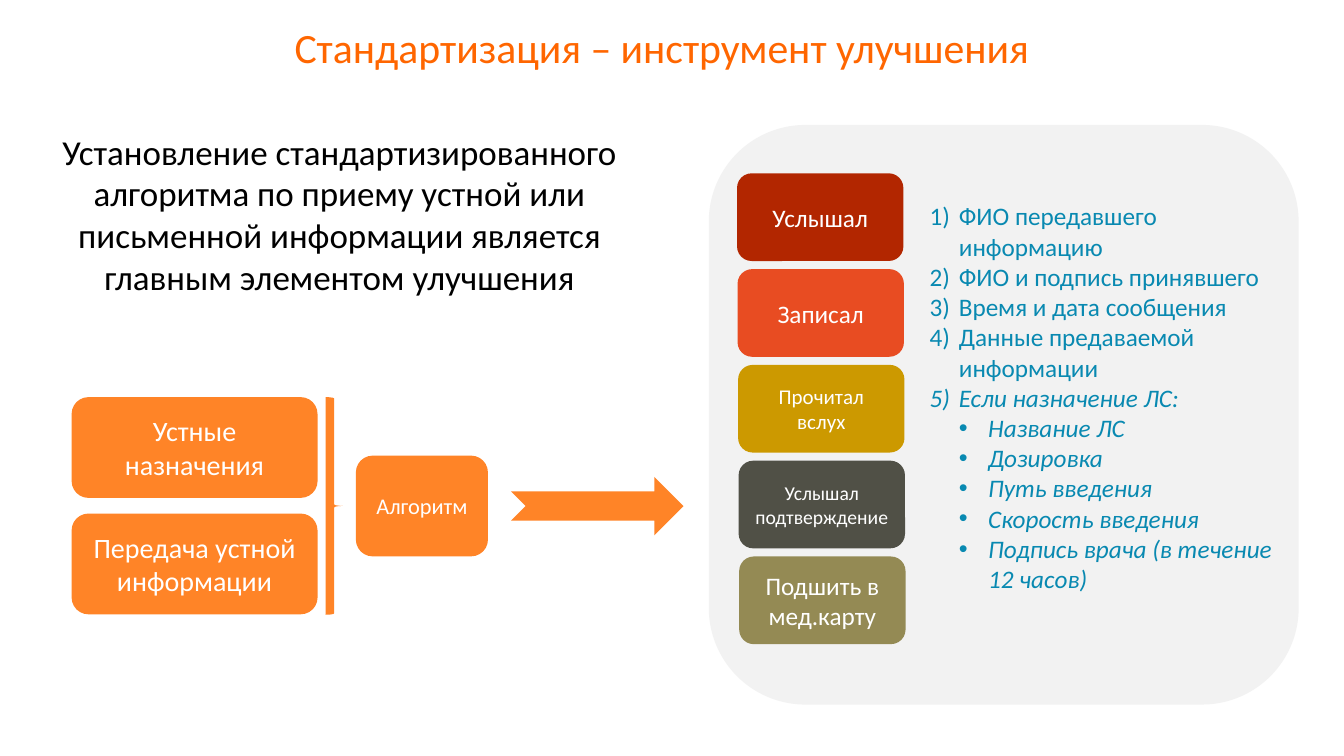
import pptx
import pptx.util
import pptx.dml.color
import pptx.enum.shapes
import pptx.enum.text
import pptx.oxml.ns
import lxml.etree

Pt = pptx.util.Pt
Inches = pptx.util.Inches
Shape = pptx.enum.shapes.MSO_SHAPE
Align = pptx.enum.text.PP_ALIGN
Anchor = pptx.enum.text.MSO_ANCHOR

COLORS = {
    "title": "FF6600", "text": "000000", "list": "0989B1", "white": "FFFFFF",
    "panel": "F2F2F2", "orange": "FF8427", "red": "B22600", "coral": "E84C22",
    "gold": "CC9900", "slate": "505046", "olive": "948A54",
}


class SlideBuilder:
    """Holds the style and the current page; places are in percent of the slide."""

    font = "Calibri"
    inset = Inches(0.11)

    def __init__(self, deck, page):
        self.deck = deck
        self.page = page

    def place(self, left, top, width, height):
        across, down = self.deck.slide_width / 100, self.deck.slide_height / 100
        return [round(value) for value in
                (left * across, top * down, width * across, height * down)]

    def color(self, name):
        return pptx.dml.color.RGBColor.from_string(COLORS[name])

    def add_span(self, para, text, size, color, italic=False):
        span = para.add_run()
        span.text = text
        span.font.name = self.font
        span.font.size = Pt(size)
        span.font.italic = italic
        span.font.color.rgb = self.color(color)

    def shape(self, kind, place, fill, text="", size=18):
        box = self.page.shapes.add_shape(kind, *self.place(*place))
        box.shadow.inherit = False
        box.fill.solid()
        box.fill.fore_color.rgb = self.color(fill)
        box.line.fill.background()
        if text:
            frame = box.text_frame
            frame.word_wrap = True
            frame.vertical_anchor = Anchor.MIDDLE
            frame.margin_left = frame.margin_right = self.inset
            para = frame.paragraphs[0]
            para.alignment = Align.CENTER
            self.add_span(para, text, size, "white")
        return box

    def placeholder(self, index, place, anchor):
        box = self.page.placeholders[index]
        box.left, box.top, box.width, box.height = self.place(*place)
        frame = box.text_frame
        frame.word_wrap = True
        frame.auto_size = pptx.enum.text.MSO_AUTO_SIZE.NONE
        frame.vertical_anchor = anchor
        return frame

    def heading(self, index, place, text, size, color, anchor, spacing=1.0):
        para = self.placeholder(index, place, anchor).paragraphs[0]
        self.bullet(para, 0, "buNone")
        para.alignment = Align.CENTER
        para.line_spacing = spacing
        para.space_before = Pt(0)
        self.add_span(para, text, size, color)

    def bullet(self, para, level, tag, **attributes):
        hang = Inches(0.29) if level else 0
        settings = para._p.get_or_add_pPr()
        settings.set("marL", str(hang * level))
        settings.set("indent", str(-hang))
        if level:
            face = self.font if level == 1 else "Arial"
            lxml.etree.SubElement(
                settings, pptx.oxml.ns.qn("a:buFont"), typeface=face)
        lxml.etree.SubElement(settings, pptx.oxml.ns.qn("a:" + tag), **attributes)

    def checklist(self, index, place, items, size, color):
        frame = self.placeholder(index, place, Anchor.TOP)
        for number, (level, text, italic) in enumerate(items):
            para = frame.add_paragraph() if number else frame.paragraphs[0]
            if level == 1:
                self.bullet(para, level, "buAutoNum", type="arabicParenR")
            else:
                self.bullet(para, level, "buChar", char="•")
            para.space_before = Pt(0)
            self.add_span(para, text, size, color, italic)


def main():
    deck = pptx.Presentation()
    deck.slide_width, deck.slide_height = Inches(13.33), Inches(7.5)
    page = deck.slides.add_slide(deck.slide_layouts.get_by_name("Two Content"))
    slide = SlideBuilder(deck, page)

    # Grey panel, behind everything else
    panel = slide.shape(Shape.ROUNDED_RECTANGLE, (52.74, 16.53, 43.89, 76.67), "panel")
    panel.element.getparent().insert(2, panel.element)

    # Title and statement
    slide.heading(0, (15.98, 3.33, 66.54, 6.93),
                  "Стандартизация – инструмент улучшения",
                  29.8, "title", Anchor.MIDDLE, 0.8)
    slide.heading(1, (2.93, 16.53, 44.64, 17.73),
                  "Установление стандартизированного алгоритма по приему устной "
                  "или письменной информации является главным элементом улучшения",
                  25, "text", Anchor.TOP)

    # Two inputs lead through the algorithm to the panel
    for row, text in enumerate(("Устные назначения", "Передача устной информации")):
        slide.shape(Shape.ROUNDED_RECTANGLE,
                    (5.33, 52.53 + 15.4 * row, 18.3, 13.33), "orange", text, 20)
    slide.shape(Shape.RIGHT_BRACE, (24.23, 52.53, 1.28, 28.8), "orange")
    slide.shape(Shape.ROUNDED_RECTANGLE, (26.48, 60.27, 9.83, 13.33),
                "orange", "Алгоритм", 16)
    slide.shape(Shape.NOTCHED_RIGHT_ARROW, (38.03, 63.07, 12.83, 7.73), "orange")

    # What has to be recorded
    slide.checklist(2, (68.42, 25.87, 28.21, 60.13), (
        (1, "ФИО передавшего информацию", False),
        (1, "ФИО и подпись принявшего", False),
        (1, "Время и дата сообщения", False),
        (1, "Данные предаваемой информации", False),
        (1, "Если назначение ЛС:", True),
        (2, "Название ЛС", True),
        (2, "Дозировка", True),
        (2, "Путь введения", True),
        (2, "Скорость введения", True),
        (2, "Подпись врача (в течение 12 часов)", True),
    ), 18, "list")

    # Steps of the algorithm, each a little further right
    steps = (
        ("Услышал", "red", 18),
        ("Записал", "coral", 18),
        ("Прочитал вслух", "gold", 15),
        ("Услышал подтверждение", "slate", 14),
        ("Подшить в мед.карту", "olive", 18),
    )
    for row, (text, fill, size) in enumerate(steps):
        slide.shape(Shape.ROUNDED_RECTANGLE,
                    (54.84 + 0.04 * row, 22.93 + 12.67 * row, 12.38, 11.6),
                    fill, text, size)

    deck.save("out.pptx")


if __name__ == "__main__":
    main()
